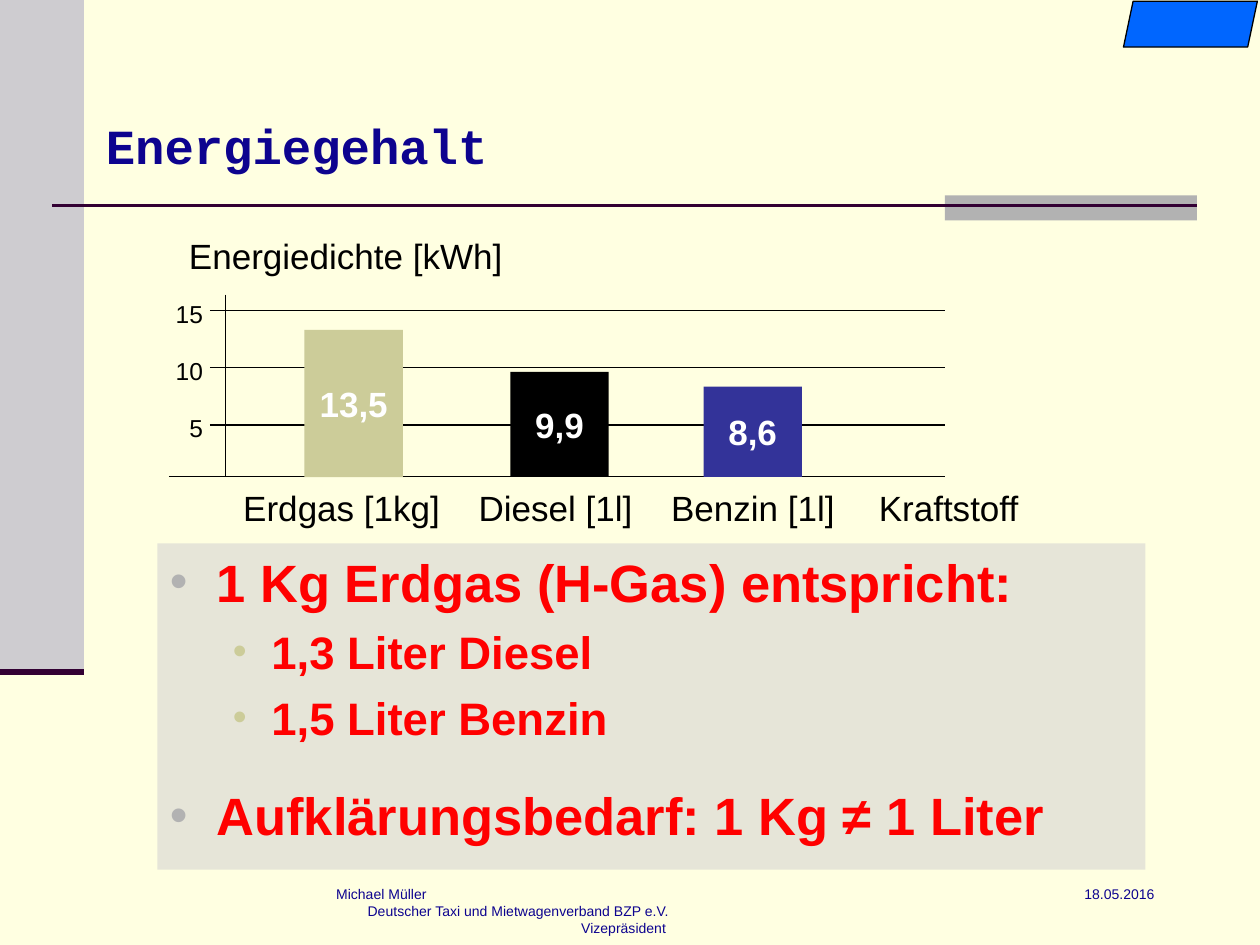
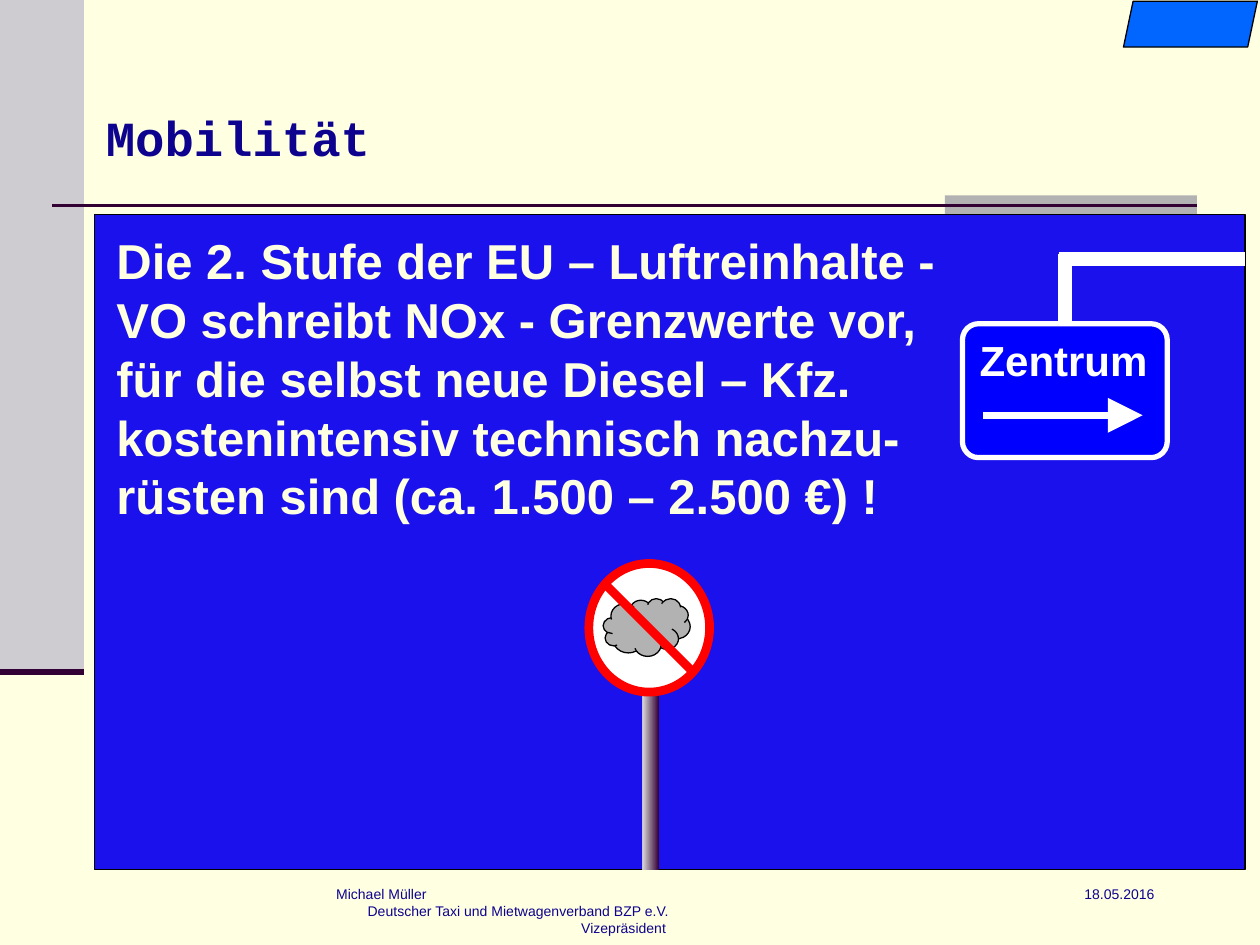
from lxml.etree import SubElement
from pptx import Presentation
from pptx.dml.color import RGBColor
from pptx.enum.shapes import MSO_CONNECTOR as Connector, MSO_SHAPE as Shape
from pptx.enum.text import MSO_ANCHOR as Anchor, MSO_AUTO_SIZE as AutoSize, PP_ALIGN as Align
from pptx.oxml.ns import qn
from pptx.util import Pt

COLORS = {
    "cream": "FFFFE1", "navy": "0D038F", "blue": "0066FF", "gray": "B2B2B2",
    "plum": "330033", "black": "000000", "white": "FFFFFF", "red": "FF0000",
    "sand": "CCCC99", "indigo": "333399", "panel": "1B11ED", "sign": "0000FF",
    "silver": "DDDDDD",
}
BOLD_TITLE = {"size": 28, "color": "navy", "bold": True, "font": "Courier New"}


def style(item, fill=None, line=None, width=0.75, alpha=None):
    """Format a shape or connector: fill, outline, opacity in percent, no shadow."""
    if fill:
        item.fill.solid()
        item.fill.fore_color.rgb = RGBColor.from_string(COLORS[fill])
    if alpha:
        color = item._element.spPr.find(qn("a:solidFill")).find(qn("a:srgbClr"))
        SubElement(color, qn("a:alpha"), val=str(alpha * 1000))
    if line:
        item.line.color.rgb = RGBColor.from_string(COLORS[line])
        item.line.width = Pt(width)
    else:
        item.line.fill.background()
    SubElement(item._element.spPr, qn("a:effectLst"))


def write(frame, text, size=20, color="black", bold=False, font="Arial",
          align=Align.LEFT, anchor=Anchor.TOP, margins=(7.2, 3.6), wrap=True,
          before=0, indent=0, hanging=0, bullet=None, bullet_size=100):
    """Add one paragraph to a text frame and format it."""
    frame.word_wrap = wrap
    frame.auto_size = AutoSize.NONE
    frame.vertical_anchor = anchor
    frame.margin_left = frame.margin_right = Pt(margins[0])
    frame.margin_top = frame.margin_bottom = Pt(margins[1])
    para = frame.add_paragraph() if frame.text else frame.paragraphs[0]
    para.alignment = align
    props = para._p.get_or_add_pPr()
    if indent:
        props.set("marL", str(Pt(indent)))
        props.set("indent", str(Pt(-hanging)))
    if bullet:
        SubElement(SubElement(props, qn("a:buClr")), qn("a:srgbClr"), val=COLORS[bullet])
        SubElement(props, qn("a:buSzPct"), val=str(bullet_size * 1000))
        SubElement(props, qn("a:buFont"), typeface="Arial")
        SubElement(props, qn("a:buChar"), char="•")
    para.space_before = Pt(before)
    span = para.add_run()
    span.text = text
    span.font.name = font
    span.font.size = Pt(size)
    span.font.bold = bold
    span.font.color.rgb = RGBColor.from_string(COLORS[color])


deck = Presentation()
deck.slide_width, deck.slide_height = Pt(720), Pt(540)
background = deck.slide_master.background.fill
background.solid()
background.fore_color.rgb = RGBColor.from_string(COLORS["cream"])

# Shared frame of both slides
pages = []
for title, top, width, height in [("Energiegehalt", 59, 449, 47.5), ("Mobilität", 50, 498, 57)]:
    page = deck.slides.add_slide(deck.slide_layouts[5])
    pages.append(page)
    heading = page.shapes.title
    heading.left, heading.top = Pt(53.3), Pt(top)
    heading.width, heading.height = Pt(width), Pt(height)
    write(heading.text_frame, title, anchor=Anchor.MIDDLE, **BOLD_TITLE)

    badge = page.shapes.add_shape(Shape.PARALLELOGRAM, Pt(642), Pt(0.7), Pt(76.5), Pt(26.2))
    badge.adjustments[0] = 0.21
    style(badge, "blue", "black")
    side_band = page.shapes.add_shape(Shape.RECTANGLE, 0, 0, Pt(48), Pt(384))
    style(side_band, "navy", alpha=20)
    title_block = page.shapes.add_shape(Shape.RECTANGLE, Pt(540), Pt(111.6), Pt(144), Pt(14.4))
    style(title_block, "gray")
    for left, right, y, weight in [(30, 684, 117.5, 1.5), (0, 48, 384, 3.5)]:
        rule = page.shapes.add_connector(Connector.STRAIGHT, Pt(left), Pt(y), Pt(right), Pt(y))
        style(rule, line="plum", width=weight)

    date = page.shapes.add_textbox(Pt(612.5), Pt(502.5), Pt(74), Pt(26))
    write(date.text_frame, "18.05.2016", size=8, color="navy")
    footer = page.shapes.add_textbox(Pt(185), Pt(502.5), Pt(317.5), Pt(36))
    for text, indent in [("Michael Müller", 0),
                         ("Deutscher Taxi und Mietwagenverband BZP e.V.", 18),
                         ("Vizepräsident", 140)]:
        write(footer.text_frame, text, size=8, color="navy", indent=indent)

# Slide 1: energy content
page = pages[0]
baseline = 272.2

panel = page.shapes.add_shape(Shape.RECTANGLE, Pt(90), Pt(310.5), Pt(564.5), Pt(186.5))
style(panel, "navy", alpha=10)
main_point = {"size": 30, "indent": 26.7, "hanging": 26.7, "bullet": "gray", "bullet_size": 96}
sub_point = {"size": 26, "indent": 58, "hanging": 22, "bullet": "sand", "bullet_size": 87}
for text, level, before in [("1 Kg Erdgas (H-Gas) entspricht:", main_point, 0),
                            ("1,3 Liter Diesel", sub_point, 6.5),
                            ("1,5 Liter Benzin", sub_point, 6.5),
                            ("Aufklärungsbedarf: 1 Kg ≠ 1 Liter", main_point, 22.3)]:
    write(panel.text_frame, text, color="red", bold=True, before=before, **level)

axis_title = page.shapes.add_textbox(Pt(108), Pt(134), Pt(191), Pt(24))
write(axis_title.text_frame, "Energiedichte [kWh]", margins=(0, 0))
value_axis = page.shapes.add_connector(
    Connector.STRAIGHT, Pt(129), Pt(168.3), Pt(129), Pt(baseline))
style(value_axis, line="black")
for tick, left, y in [("15", 120, 177.6), ("10", 120, 210.2), ("5", 120, 242.8),
                      (None, 96.5, baseline)]:
    grid_line = page.shapes.add_connector(
        Connector.STRAIGHT, Pt(left), Pt(y), Pt(540), Pt(y))
    style(grid_line, line="black")
    if tick:
        tick_label = page.shapes.add_textbox(Pt(78), Pt(y - 6.5), Pt(38), Pt(17))
        write(tick_label.text_frame, tick, size=14, align=Align.RIGHT, margins=(0, 0))

for name, name_left, value, bar_left, bar_top, color in [
        ("Erdgas [1kg]", 139, "13,5", 174, 188.5, "sand"),
        ("Diesel [1l]", 273.5, "9,9", 291.6, 212.5, "black"),
        ("Benzin [1l]", 383.5, "8,6", 402, 221, "indigo")]:
    bar = page.shapes.add_shape(
        Shape.RECTANGLE, Pt(bar_left), Pt(bar_top), Pt(56.2), Pt(baseline + 0.4 - bar_top))
    style(bar, color)
    write(bar.text_frame, value, color="white", bold=True, align=Align.CENTER,
          anchor=Anchor.MIDDLE, wrap=False)
    fuel_label = page.shapes.add_textbox(Pt(name_left), Pt(278), Pt(116), Pt(24))
    write(fuel_label.text_frame, name, margins=(0, 0))
fuel_title = page.shapes.add_textbox(Pt(498), Pt(278), Pt(84), Pt(24))
write(fuel_title.text_frame, "Kraftstoff", align=Align.RIGHT, margins=(0, 0))

# Slide 2: mobility
page = pages[1]
panel = page.shapes.add_shape(Shape.RECTANGLE, Pt(54), Pt(122.5), Pt(657.5), Pt(374.5))
style(panel, "panel", "black")
message = page.shapes.add_textbox(Pt(59.5), Pt(128.2), Pt(487.5), Pt(176))
write(message.text_frame,
      "Die 2. Stufe der EU – Luftreinhalte - VO schreibt NOx - Grenzwerte vor, "
      "für die selbst neue Diesel – Kfz. kostenintensiv technisch nachzu- "
      "rüsten sind (ca. 1.500 – 2.500 €) !",
      size=28, color="cream", bold=True)

center_sign = page.shapes.add_shape(Shape.ROUNDED_RECTANGLE, Pt(550), Pt(185), Pt(117), Pt(76.5))
center_sign.adjustments[0] = 0.12
style(center_sign, "sign", "white", 3)
write(center_sign.text_frame, "Zentrum", size=24, color="white", bold=True, wrap=False)
arrow = page.shapes.add_connector(Connector.STRAIGHT, Pt(561.5), Pt(237.3), Pt(653), Pt(237.3))
style(arrow, line="white", width=4)
SubElement(arrow.line._get_or_add_ln(), qn("a:tailEnd"), type="triangle", w="lg", len="lg")
hanger = page.shapes.add_connector(Connector.STRAIGHT, Pt(608.5), Pt(145), Pt(608.5), Pt(185))
style(hanger, line="white", width=8)
hanger.end_connect(center_sign, 0)
beam = page.shapes.add_connector(Connector.STRAIGHT, Pt(605), Pt(148.3), Pt(711.5), Pt(148.3))
style(beam, line="white", width=8)

pole = page.shapes.add_shape(Shape.RECTANGLE, Pt(367), Pt(384.5), Pt(9.5), Pt(112.5))
style(pole)
pole.fill.gradient()
pole.fill.gradient_angle = 0
for stop, color in zip(pole.fill.gradient_stops, ("silver", "plum")):
    stop.color.rgb = RGBColor.from_string(COLORS[color])
ban_sign = page.shapes.add_shape(Shape.OVAL, Pt(336.5), Pt(322), Pt(69), Pt(73.5))
style(ban_sign, "white", "red", 5)
exhaust_cloud = page.shapes.add_shape(Shape.CLOUD, Pt(344.7), Pt(342), Pt(49.7), Pt(33))
style(exhaust_cloud, "gray", "black")
ban_bar = page.shapes.add_connector(
    Connector.STRAIGHT, Pt(345.5), Pt(333.5), Pt(394.5), Pt(382.5))
style(ban_bar, line="red", width=5)

deck.save("out.pptx")
